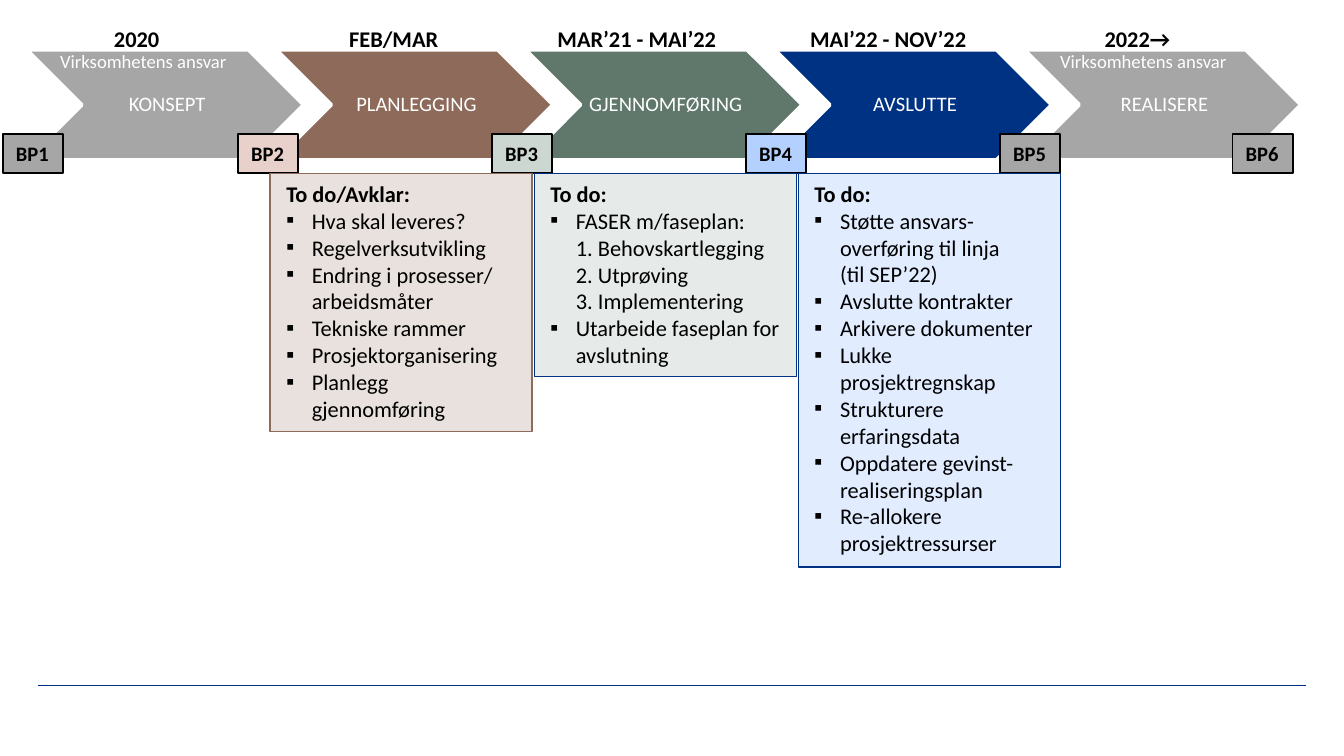
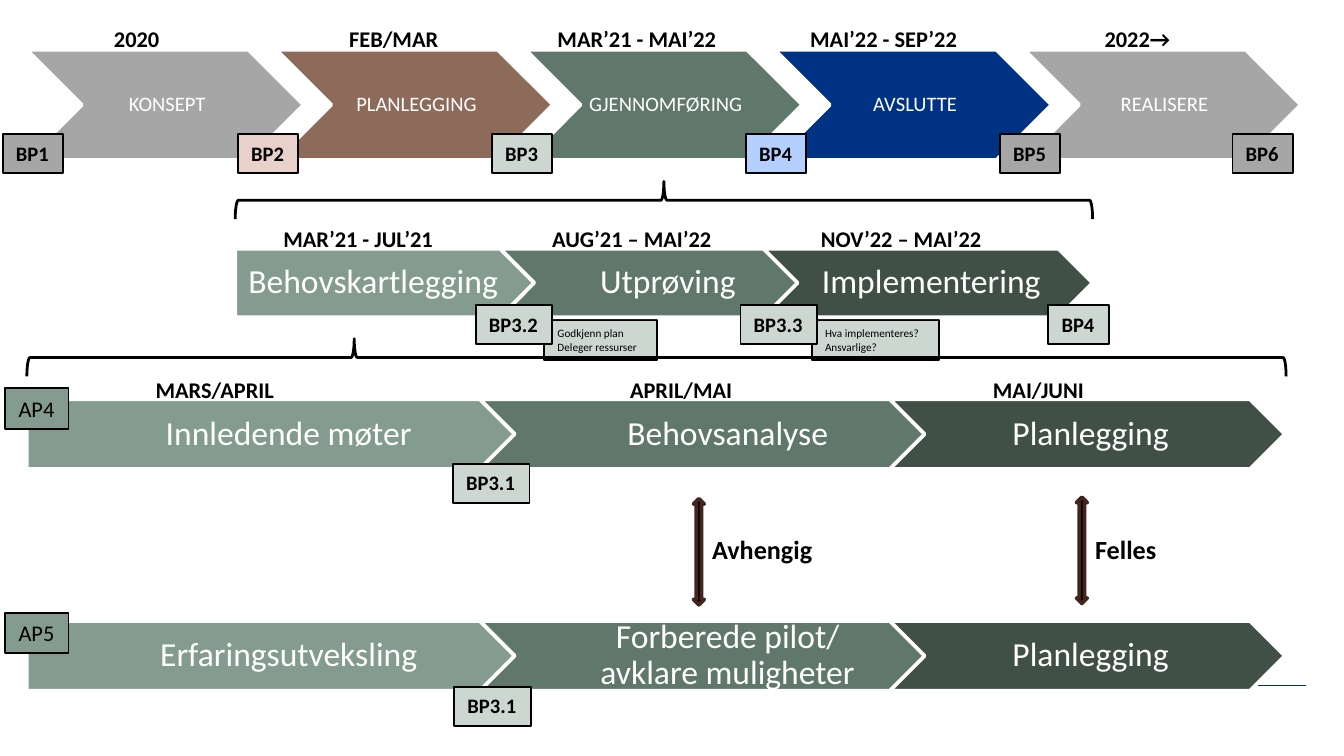
from lxml.etree import SubElement
from pptx import Presentation
from pptx.dml.color import RGBColor
from pptx.enum.shapes import MSO_CONNECTOR, MSO_SHAPE as SHAPE
from pptx.enum.text import MSO_ANCHOR as ANCHOR, MSO_AUTO_SIZE as FIT, PP_ALIGN as ALIGN
from pptx.oxml.ns import qn
from pptx.util import Inches, Pt

# Shared style
FONT = "Calibri"
BLACK = RGBColor(0x00, 0x00, 0x00)
WHITE = RGBColor(0xFF, 0xFF, 0xFF)
GREY = RGBColor(0xA6, 0xA6, 0xA6)
BROWN = RGBColor(0x8D, 0x6A, 0x59)
DARK_BROWN = RGBColor(0x44, 0x25, 0x1E)
BLUE = RGBColor(0x00, 0x32, 0x83)
GREEN = RGBColor(0x60, 0x78, 0x6B)
LIGHT_GREEN = RGBColor(0x83, 0x9C, 0x8F)
DARK_GREEN = RGBColor(0x40, 0x50, 0x47)
PALE_GREEN = RGBColor(0xCD, 0xD7, 0xD2)
PALE_BLUE = RGBColor(0xB3, 0xD0, 0xFF)
PALE_ROSE = RGBColor(0xE8, 0xD0, 0xCB)
PANEL_ROSE = RGBColor(0xE9, 0xE1, 0xDD)
PANEL_GREEN = RGBColor(0xE6, 0xEB, 0xE9)
PANEL_BLUE = RGBColor(0xE1, 0xEC, 0xFF)

WIDTH = 10
HEIGHT = WIDTH * 9 / 16
MARGIN = 0.28
INSETS = (0.1, 0.05, 0.1, 0.05)

# Main process, on both slides
STAGES = [("KONSEPT", GREY), ("PLANLEGGING", BROWN), ("GJENNOMFØRING", GREEN),
          ("AVSLUTTE", BLUE), ("REALISERE", GREY)]
STAGE_LEFT, STAGE_TOP, STAGE_PITCH, STAGE_SIZE = 0.2, 0.37, 7.42 / 4, (2.06, 0.82)
GATES = [("BP1", 0.02, GREY), ("BP2", 1.77, PALE_ROSE), ("BP3", 3.66, PALE_GREEN),
         ("BP4", 5.55, PALE_BLUE), ("BP5", 7.44, GREY), ("BP6", 9.17, GREY)]
GATE_TOP, GATE_HEIGHT = 1, 0.29
DATE_STOPS = [1.75, 3.3, 5.18, 7.37]
DATES_OVERVIEW = ["2020", "FEB/MAR", "MAR’21 - MAI’22", "MAI’22 - NOV’22", "2022→"]
DATES_DETAIL = ["2020", "FEB/MAR", "MAR’21 - MAI’22", "MAI’22 - SEP’22", "2022→"]

# Slide 1: to-do panels as (heading, items, fill, line, height)
PANELS = [
    ("To do/Avklar:",
     ["Hva skal leveres?", "Regelverksutvikling", "Endring i prosesser/ arbeidsmåter",
      "Tekniske rammer", "Prosjektorganisering", "Planlegg gjennomføring"],
     PANEL_ROSE, BROWN, 1.92),
    ("To do:",
     ["FASER m/faseplan: \n1. Behovskartlegging\n2. Utprøving\n3. Implementering",
      "Utarbeide faseplan for avslutning"],
     PANEL_GREEN, BLUE, 1.51),
    ("To do:",
     ["Støtte ansvars-overføring til linja \n(til SEP’22)", "Avslutte kontrakter",
      "Arkivere dokumenter", "Lukke prosjektregnskap", "Strukturere erfaringsdata",
      "Oppdatere gevinst-realiseringsplan", "Re-allokere prosjektressurser"],
     PANEL_BLUE, BLUE, 2.93),
]
PANEL_LEFT, PANEL_TOP, PANEL_WIDTH, PANEL_PITCH = 2.01, 1.29, 1.95, 3.93 / 2
OWNER = "Virksomhetens ansvar"

# Slide 2: phases, work packages and their gates
GREENS = [LIGHT_GREEN, GREEN, DARK_GREEN]
PHASES = ["Behovskartlegging", "Utprøving", "Implementering"]
PHASE_DATES = ["MAR’21 - JUL’21", "AUG’21 – MAI’22", "NOV’22 – MAI’22"]
PHASE_SPANS = [(1.75, 2.45), (3.72, 2.45), (5.68, 2.45)]
PACKAGE_DATES = ["MARS/APRIL", "APRIL/MAI", "MAI/JUNI"]
PACKAGE_SPANS = [(0.2, 3.96), (3.57, 3.64), (6.62, 2.94)]
PACKAGES = [("AP4", 2.97, 2.89, ["Innledende møter", "Behovsanalyse", "Planlegging"]),
            ("AP5", 4.62, 4.56, ["Erfaringsutveksling", "Forberede pilot/\navklare muligheter",
                                 "Planlegging"])]
NOTES = [("Hva implementeres?\nAnsvarlige?", 6.04, 0.95),
         ("Godkjenn plan\nDeleger ressurser", 4.05, 0.84)]
SUB_GATES = [("BP3.2", 3.54, 2.27, 0.57), ("BP3.3", 5.51, 2.27, 0.57), ("BP4", 7.8, 2.27, 0.45),
             ("BP3.1", 3.37, 3.45, 0.57), ("BP3.1", 3.38, 5.11, 0.57)]
BRACES = [(1.75, 1.35, 6.38, 0.5), (0.2, 2.52, 9.37, 0.26)]
LINKS = [("Avhengig", 5.16, 3.71, 0.95), ("Felles", 8.01, 3.7, 0.66)]


def place(*lengths):
    return [Inches(length) for length in lengths]


def setup_frame(box, insets=INSETS, anchor=ANCHOR.TOP, wrap=True, grow=True):
    frame = box.text_frame
    frame.word_wrap = wrap
    frame.auto_size = FIT.SHAPE_TO_FIT_TEXT if grow else FIT.NONE
    frame.vertical_anchor = anchor
    (frame.margin_left, frame.margin_top,
     frame.margin_right, frame.margin_bottom) = place(*insets)
    return frame


def write(para, text, size, color=BLACK, bold=False, align=ALIGN.LEFT):
    para.alignment = align
    for index, line in enumerate(text.split("\n")):
        if index:
            para.add_line_break()
        span = para.add_run()
        span.text = line
        span.font.name, span.font.size = FONT, Pt(size)
        span.font.bold, span.font.color.rgb = bold, color


def add_bullet(para, indent=0.19):
    properties = para._p.get_or_add_pPr()
    properties.set("marL", str(Inches(indent)))
    properties.set("indent", str(-Inches(indent)))
    SubElement(properties, qn("a:buFont")).set("typeface", FONT)
    SubElement(properties, qn("a:buChar")).set("char", "▪")


def add_tabs(para, stops):
    tabs = SubElement(para._p.get_or_add_pPr(), qn("a:tabLst"))
    for stop in stops:
        tab = SubElement(tabs, qn("a:tab"))
        tab.set("pos", str(Inches(stop)))
        tab.set("algn", "l")


def add_shape(shapes, kind, at, fill, line, weight):
    box = shapes.add_shape(kind, *place(*at))
    box.shadow.inherit = False
    if fill is None:
        box.fill.background()
    else:
        box.fill.solid()
        box.fill.fore_color.rgb = fill
    box.line.color.rgb, box.line.width = line, Pt(weight)
    return box


def add_label(page, text, at, fill, size=11, bold=True, wrap=False):
    box = add_shape(page.shapes, SHAPE.RECTANGLE, at, fill, BLACK, 1)
    write(setup_frame(box, wrap=wrap).paragraphs[0], text, size, bold=bold)


def add_text(page, texts, at, size, stops=(), color=BLACK, bold=True, wrap=True):
    """One line of text; several texts are set out on tab stops."""
    box = page.shapes.add_textbox(*place(*at))
    para = setup_frame(box, wrap=wrap).paragraphs[0]
    if stops:
        add_tabs(para, stops)
    write(para, "\t".join(texts), size, color, bold)


def add_step(group, kind, text, at, fill, size, insets, align=ALIGN.CENTER):
    box = add_shape(group.shapes, kind, at, fill, WHITE, 2)
    para = setup_frame(box, insets, ANCHOR.MIDDLE, grow=False).paragraphs[0]
    para.line_spacing = 0.9
    write(para, text, size, WHITE, align=align)


def add_arrow_row(page, texts, spans, top, height, first_align=ALIGN.CENTER):
    group = page.shapes.add_group_shape()
    for index, (text, (left, width), fill) in enumerate(zip(texts, spans, GREENS)):
        first = index == 0
        add_step(group, SHAPE.PENTAGON if first else SHAPE.CHEVRON, text,
                 (left, top, width, height), fill, 18,
                 (0.1 if first else 0.08, 0.05, 0.03, 0.05),
                 first_align if first else ALIGN.CENTER)


def new_page(deck):
    page = deck.slides.add_slide(deck.slide_layouts[6])
    rule = page.shapes.add_connector(MSO_CONNECTOR.STRAIGHT,
                                     *place(MARGIN, 5.1, WIDTH - MARGIN, 5.1))
    rule.line.color.rgb, rule.line.width = BLUE, Pt(0.75)
    SubElement(rule._element.spPr, qn("a:effectLst"))
    return page


def add_process(page, dates):
    group = page.shapes.add_group_shape()
    for index, (name, fill) in enumerate(STAGES):
        left = STAGE_LEFT + index * STAGE_PITCH
        add_step(group, SHAPE.CHEVRON, name, (left, STAGE_TOP, *STAGE_SIZE), fill, 11,
                 (0.05, 0.02, 0.02, 0.02))
    add_text(page, dates, (0.75, 0.14, 8.16, 0.3), 12, DATE_STOPS)
    for name, left, fill in GATES:
        add_label(page, name, (left, GATE_TOP, 0.45, GATE_HEIGHT), fill)


def build_overview(deck):
    page = new_page(deck)
    add_process(page, DATES_OVERVIEW)
    for index, (heading, items, fill, line, height) in enumerate(PANELS):
        left = PANEL_LEFT + index * PANEL_PITCH
        box = add_shape(page.shapes, SHAPE.RECTANGLE, (left, PANEL_TOP, PANEL_WIDTH, height),
                        fill, line, 0.75)
        frame = setup_frame(box, (0.12, 0.05, 0.1, 0.05))
        write(frame.paragraphs[0], heading, 12, bold=True)
        for item in items:
            para = frame.add_paragraph()
            add_bullet(para)
            write(para, item, 12)
    add_text(page, [OWNER, OWNER], (0.35, 0.32, 8.94, 0.27), 10, [7.44], WHITE, bold=False)


def build_detail(deck):
    page = new_page(deck)
    for text, left, width in NOTES:
        add_label(page, text, (left, 2.38, width, 0.3), PALE_GREEN, 6, bold=False, wrap=True)

    # Phases and main process
    add_arrow_row(page, PHASES, PHASE_SPANS, 1.85, 0.51, ALIGN.LEFT)
    add_process(page, DATES_DETAIL)

    # Braces lie on their side, pointing up
    depth = 0.28
    for left, top, span, point in BRACES:
        at = (left + (span - depth) / 2, top - (span - depth) / 2, depth, span)
        brace = add_shape(page.shapes, SHAPE.RIGHT_BRACE, at, None, BLACK, 1.5)
        brace.rotation = 270
        brace.adjustments[1] = point

    # Work packages
    for name, top, label_top, texts in PACKAGES:
        add_arrow_row(page, texts, PACKAGE_SPANS, top, 0.52)
        add_label(page, name, (0.04, label_top, 0.47, 0.3), LIGHT_GREEN, 12, bold=False)

    # Links between the packages
    for text, left, top, width in LINKS:
        add_shape(page.shapes, SHAPE.UP_DOWN_ARROW, (left, top, 0.08, 0.79),
                  BLACK, DARK_BROWN, 2)
        add_text(page, [text], (left + 0.04, 3.92, width, 0.34), 14, wrap=False)

    # Gates and dates
    for name, left, top, width in SUB_GATES:
        add_label(page, name, (left, top, width, GATE_HEIGHT), PALE_GREEN)
    add_text(page, PHASE_DATES, (2.01, 1.63, 5.45, 0.3), 12, [2, 4])
    add_text(page, PACKAGE_DATES, (1.06, 2.75, 8.23, 0.3), 12, [3.53, 6.23])


def main():
    deck = Presentation()
    deck.slide_width, deck.slide_height = place(WIDTH, HEIGHT)
    build_overview(deck)
    build_detail(deck)
    deck.save("out.pptx")


if __name__ == "__main__":
    main()
